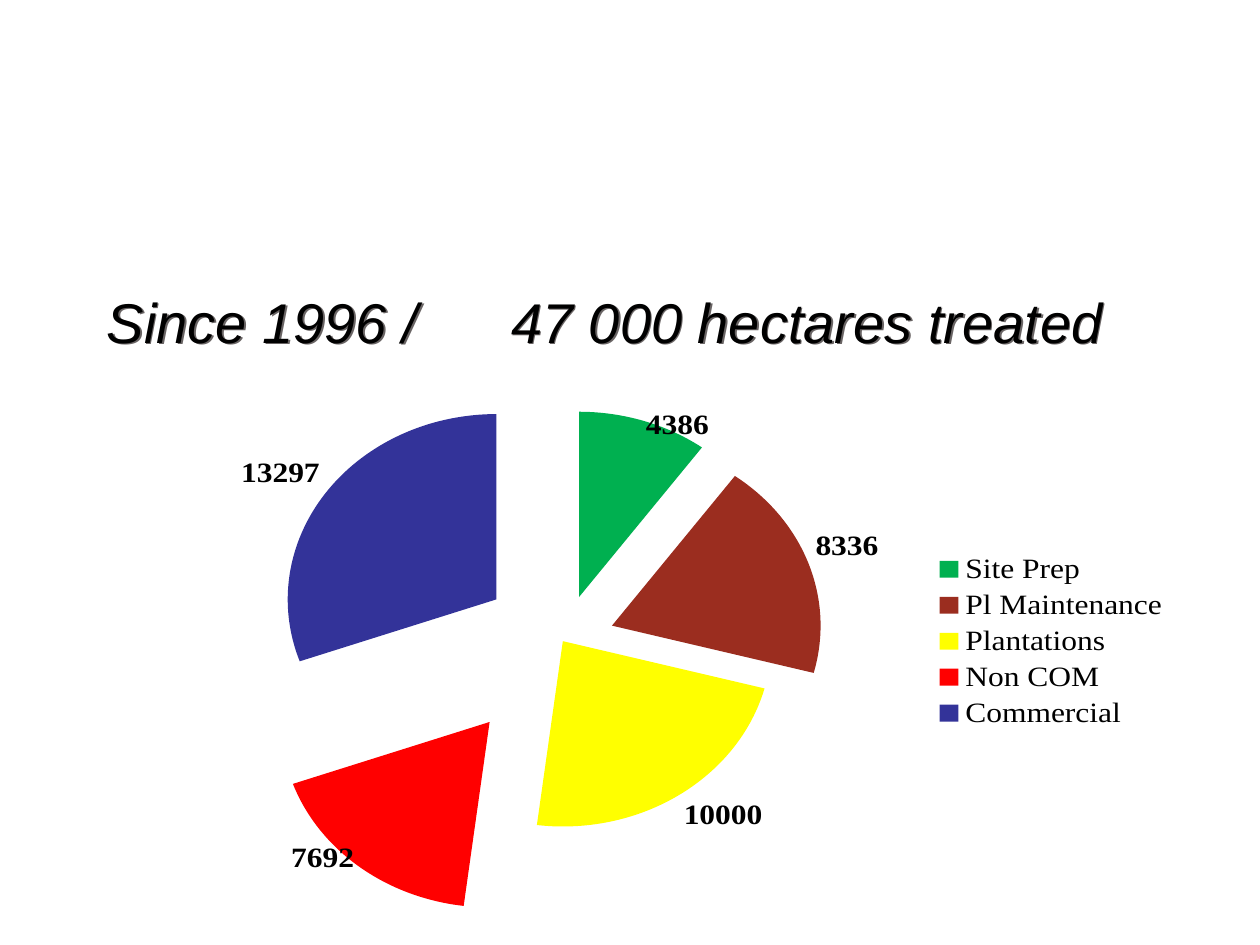
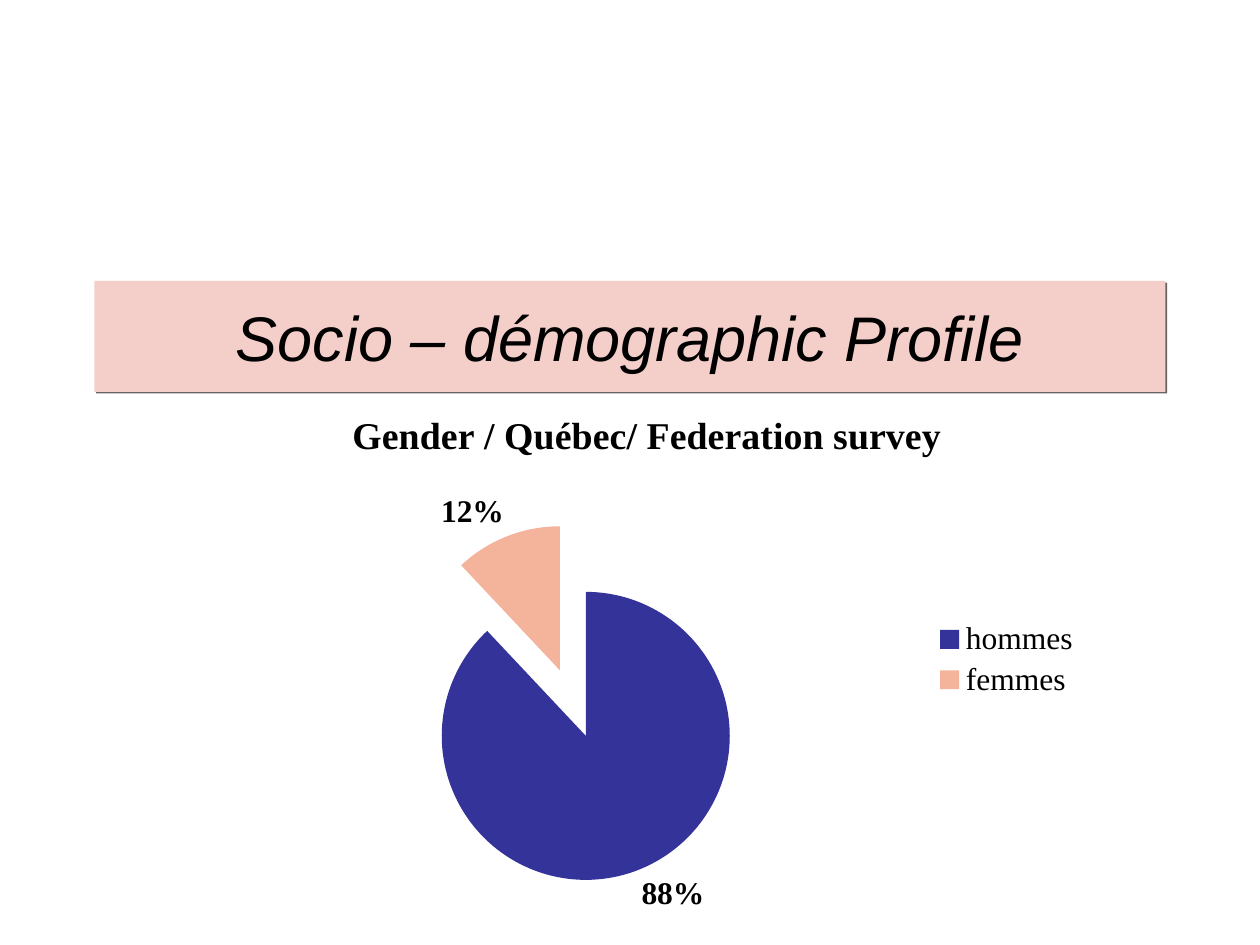
from lxml import etree
from pptx import Presentation
from pptx.chart import data as cd
from pptx.dml.color import RGBColor
from pptx.enum import chart as ec, shapes, text
from pptx.oxml import ns, parse_xml
from pptx.util import Pt

BLACK = RGBColor(0x00, 0x00, 0x00)
GREY = RGBColor(0x69, 0x64, 0x64)
ROSE = RGBColor(0xF4, 0xCE, 0xC9)
GREEN = RGBColor(0x00, 0xB0, 0x50)
BROWN = RGBColor(0x9B, 0x2D, 0x1F)
YELLOW = RGBColor(0xFF, 0xFF, 0x00)
RED = RGBColor(0xFF, 0x00, 0x00)
BLUE = RGBColor(0x33, 0x33, 0x99)
SALMON = RGBColor(0xF4, 0xB3, 0x9B)

TITLE_FONT = {"name": "Arial", "italic": True}
CHART_FONT = {"name": "Times New Roman", "size": Pt(18)}
SERIES_EXPLOSION = 25


def set_font(font, **values):
    font.color.rgb = BLACK
    for key, value in values.items():
        setattr(font, key, value)


def add_hard_shadow(sp):
    """Sharp grey shadow, down and to the right."""
    sp.shadow.inherit = False
    effects = sp.element.spPr.find(ns.qn("a:effectLst"))
    effects.append(parse_xml(
        f'<a:outerShdw {ns.nsdecls("a")} dist="{Pt(1.4)}" dir="2700000" '
        f'algn="ctr" rotWithShape="0"><a:srgbClr val="{GREY}"/></a:outerShdw>'))


def add_title(s, words, top, height, size, fill=None, tab=None):
    """Italic title with a shadow, on a filled band or on its own."""
    box = [Pt(v) for v in (54, top, 612, height)]
    if fill:
        sp = s.shapes.add_shape(shapes.MSO_SHAPE.RECTANGLE, *box)
        sp.fill.solid()
        sp.fill.fore_color.rgb = fill
        sp.line.fill.background()
    else:
        sp = s.shapes.add_textbox(*box)
    add_hard_shadow(sp)
    tf = sp.text_frame
    tf.word_wrap = True
    tf.vertical_anchor = text.MSO_ANCHOR.MIDDLE
    p = tf.paragraphs[0]
    p.alignment = text.PP_ALIGN.CENTER if fill else text.PP_ALIGN.LEFT
    if tab:
        tabs = etree.SubElement(p._p.get_or_add_pPr(), ns.qn("a:tabLst"))
        etree.SubElement(tabs, ns.qn("a:tab"), pos=str(Pt(tab)), algn="l")
    r = p.add_run()
    r.text = words
    set_font(r.font, size=Pt(size), **TITLE_FONT)


def explosion_xml(percent):
    return parse_xml(f'<c:explosion {ns.nsdecls("c")} val="{percent}"/>')


def set_plot_area(plot, x, y, w, h):
    """Fix the inner plot area, in fractions of the chart."""
    area = plot._element.getparent()
    for old in area.findall(ns.qn("c:layout")):
        area.remove(old)
    parts = [("layoutTarget", "inner"), ("xMode", "edge"), ("yMode", "edge"),
             ("x", x), ("y", y), ("w", w), ("h", h)]
    inner = "".join(f'<c:{tag} val="{val}"/>' for tag, val in parts)
    area.insert(0, parse_xml(f'<c:layout {ns.nsdecls("c")}><c:manualLayout>'
                             f'{inner}</c:manualLayout></c:layout>'))


def add_pie(s, box, slices, plot_box, number_format="General", title=None):
    """Pie from (category, value, colour, explosion) slices."""
    names, values, colours, explosions = zip(*slices)
    data = cd.CategoryChartData(number_format=number_format)
    data.categories = names
    data.add_series("Series 1", values)
    chart = s.shapes.add_chart(ec.XL_CHART_TYPE.PIE, *[Pt(v) for v in box], data).chart
    set_font(chart.font, **CHART_FONT)

    # Title and legend
    chart.has_title = bool(title)
    if title:
        p = chart.chart_title.text_frame.paragraphs[0]
        r = p.add_run()
        r.text = title
        set_font(r.font, name="Times New Roman", size=Pt(21.6), bold=True)
        chart.chart_title.include_in_layout = False
    chart.has_legend = True
    chart.legend.position = ec.XL_LEGEND_POSITION.RIGHT
    chart.legend.include_in_layout = False
    set_font(chart.legend.font, **CHART_FONT)

    # Slices
    plot = chart.plots[0]
    plot.vary_by_categories = True
    set_plot_area(plot, *plot_box)
    series = plot.series[0]
    for i, (colour, explosion) in enumerate(zip(colours, explosions)):
        fill = series.points[i].format.fill
        fill.solid()
        fill.fore_color.rgb = colour
        point = series._element.findall(ns.qn("c:dPt"))[i]
        point.find(ns.qn("c:spPr")).addprevious(explosion_xml(explosion))
    first_point = series._element.find(ns.qn("c:dPt"))
    first_point.addprevious(explosion_xml(SERIES_EXPLOSION))

    # Value labels
    plot.has_data_labels = True
    labels = plot.data_labels
    label_format = {"show_value": True, "show_percentage": False,
                    "number_format": number_format, "number_format_is_linked": False,
                    "position": ec.XL_LABEL_POSITION.OUTSIDE_END}
    for key, value in label_format.items():
        setattr(labels, key, value)
    set_font(labels.font, bold=True, **CHART_FONT)


def main():
    prs = Presentation()
    prs.slide_width, prs.slide_height = Pt(720), Pt(540)
    blank = prs.slide_layouts[6]

    # Hectares treated
    s = prs.slides.add_slide(blank)
    add_title(s, "Since 1996 /\t47 000 hectares treated", 138.24, 90, 32, tab=231)
    add_pie(s, (37.44, 219.6, 638.64, 298.08), [
        ("Site Prep", 4386, GREEN, 25),
        ("Pl Maintenance", 8336, BROWN, 25),
        ("Plantations", 10000, YELLOW, 0),
        ("Non COM", 7692, RED, 56),
        ("Commercial", 13297, BLUE, 39),
    ], plot_box=(0, 0, 0.89, 1))

    # Gender
    s = prs.slides.add_slide(blank)
    add_title(s, "Socio – démographic Profile", 160.56, 63.36, 36, fill=ROSE)
    add_pie(s, (120.24, 221.04, 504.72, 311.76), [
        ("hommes", 0.88, BLUE, 0),
        ("femmes", 0.12, SALMON, 49),
    ], plot_box=(0.22, 0.31, 0.41, 0.66), number_format="0%",
        title="Gender / Québec/ Federation survey ")

    prs.save("out.pptx")


if __name__ == "__main__":
    main()
